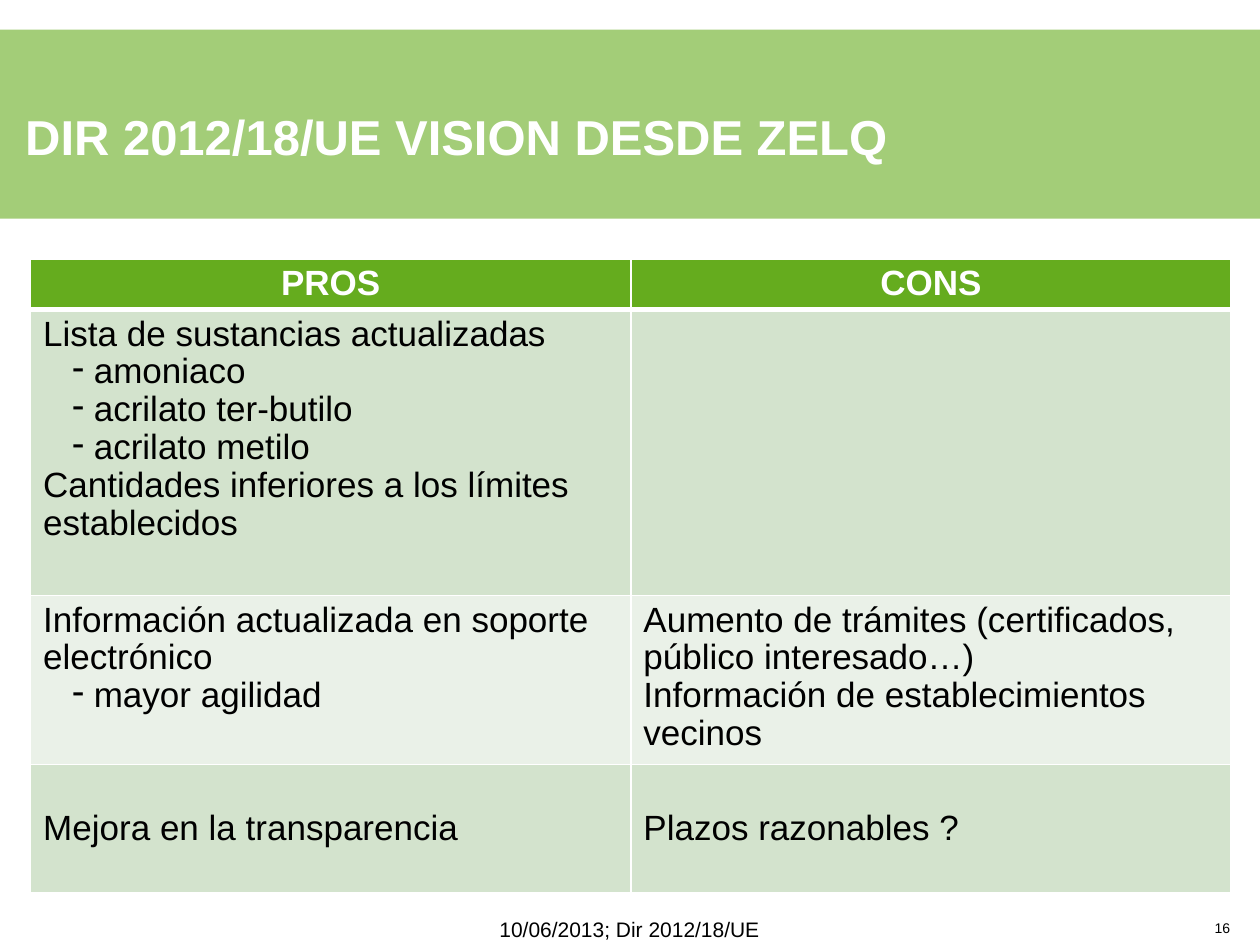
import pptx
import pptx.util
import pptx.dml.color
import pptx.enum.shapes
import pptx.enum.text
import pptx.oxml
import pptx.oxml.ns
import lxml.etree

Pt = pptx.util.Pt
RGB = pptx.dml.color.RGBColor
ALIGN = pptx.enum.text.PP_ALIGN
ANCHOR = pptx.enum.text.MSO_ANCHOR
FONT = "Arial"

WHITE = RGB(0xFF, 0xFF, 0xFF)
BLACK = RGB(0x00, 0x00, 0x00)
BAND = RGB(0xA3, 0xCD, 0x78)
HEAD = RGB(0x65, 0xAC, 0x1E)
DARK = RGB(0xD3, 0xE3, 0xCD)
PALE = RGB(0xEA, 0xF1, 0xE8)

HEIGHTS = [28.6, 163.4, 96.6, 73.6]
ROWS = [
    (["PROS"], ["CONS"]),
    (["Lista de sustancias actualizadas", "- amoniaco",
      "- acrilato ter-butilo", "- acrilato metilo",
      "Cantidades inferiores a los límites establecidos"], []),
    (["Información actualizada en soporte electrónico", "- mayor agilidad"],
     ["Aumento de trámites (certificados, público interesado…)",
      "Información de establecimientos vecinos"]),
    (["Mejora en la transparencia"], ["Plazos razonables ?"]),
]


def style(para, size, color, bold=False, align=ALIGN.LEFT):
    para.alignment = align
    font = para.font
    font.name, font.size, font.bold = FONT, Pt(size), bold
    font.color.rgb = color


def frame(shape, wrap=True):
    """Clear the margins and anchor the text at the bottom."""
    text = shape.text_frame
    text.margin_left = text.margin_right = 0
    text.margin_top = text.margin_bottom = 0
    text.vertical_anchor = ANCHOR.BOTTOM
    text.auto_size = pptx.enum.text.MSO_AUTO_SIZE.NONE
    text.word_wrap = wrap
    return text


def header(slide, left, top, width, height):
    band = slide.shapes.add_shape(
        pptx.enum.shapes.MSO_SHAPE.RECTANGLE,
        Pt(left), Pt(top), Pt(width), Pt(height))
    band.shadow.inherit = False
    band.fill.solid()
    band.fill.fore_color.rgb = BAND
    band.line.fill.background()

    title = slide.shapes.title
    band.element.getparent().insert(2, band.element)  # behind the title
    title.left, title.top = Pt(left + 14.4), Pt(top + 37.5)
    title.width, title.height = Pt(562), Pt(40)
    title.fill.solid()
    title.fill.fore_color.rgb = BAND
    text = frame(title)
    text.text = "DIR 2012/18/UE VISION DESDE ZELQ"
    para = text.paragraphs[0]
    para.line_spacing = 1.1
    style(para, 28, WHITE, True)


def border(cell, side, width):
    props = cell._tc.get_or_add_tcPr()
    props.append(pptx.oxml.parse_xml(
        f'<a:ln{side} {pptx.oxml.ns.nsdecls("a")} w="{Pt(width)}">'
        f'<a:solidFill><a:srgbClr val="{WHITE}"/></a:solidFill></a:ln{side}>'))


def dash(para):
    props = para._p.get_or_add_pPr()
    props.set("marL", str(Pt(28.9)))
    props.set("indent", str(Pt(-12.2)))
    mark = lxml.etree.SubElement(props, pptx.oxml.ns.qn("a:buChar"))
    mark.set("char", "-")


def fill(cell, row, lines):
    for side in "LRTB":
        thick = (row, side) in ((0, "B"), (1, "T"))
        border(cell, side, 3 if thick else 1)
    cell.fill.solid()
    cell.fill.fore_color.rgb = HEAD if row == 0 else DARK if row % 2 else PALE
    if row == len(ROWS) - 1:
        cell.vertical_anchor = ANCHOR.MIDDLE
    text = cell.text_frame
    text.text = "\n".join(line.removeprefix("- ") for line in lines)
    for para, line in zip(text.paragraphs, lines):
        para.line_spacing = 0.97
        if line.startswith("- "):
            dash(para)
        if row == 0:
            style(para, 20, WHITE, True, ALIGN.CENTER)
        else:
            style(para, 20, BLACK)


def grid(slide, left, top, width):
    table = slide.shapes.add_table(
        len(ROWS), 2, Pt(left), Pt(top), Pt(width), Pt(sum(HEIGHTS))).table
    table.horz_banding = False
    for row, cells in enumerate(ROWS):
        table.rows[row].height = Pt(HEIGHTS[row])
        for col, lines in enumerate(cells):
            fill(table.cell(row, col), row, lines)


def label(slide, words, box, size, align, wrap=True):
    text = frame(slide.shapes.add_textbox(*map(Pt, box)), wrap)
    text.text = words
    style(text.paragraphs[0], size, BLACK, align=align)


def footer(slide, left, base, width):
    """Date in the middle, page number at the right, both on one base."""
    label(slide, "10/06/2013; Dir 2012/18/UE",
          (left, base - 8, width, 8), 12, ALIGN.CENTER)
    label(slide, "16", (left + width, base - 14.5, 57, 11.5),
          8, ALIGN.RIGHT, False)


def main():
    deck = pptx.Presentation()
    deck.slide_width, deck.slide_height = Pt(720), Pt(540)
    slide = deck.slides.add_slide(deck.slide_layouts[5])
    header(slide, 0, 17, 720, 108)
    grid(slide, 17.5, 148, 686)
    footer(slide, 73.5, 538, 572.5)
    deck.save("out.pptx")


if __name__ == "__main__":
    main()
